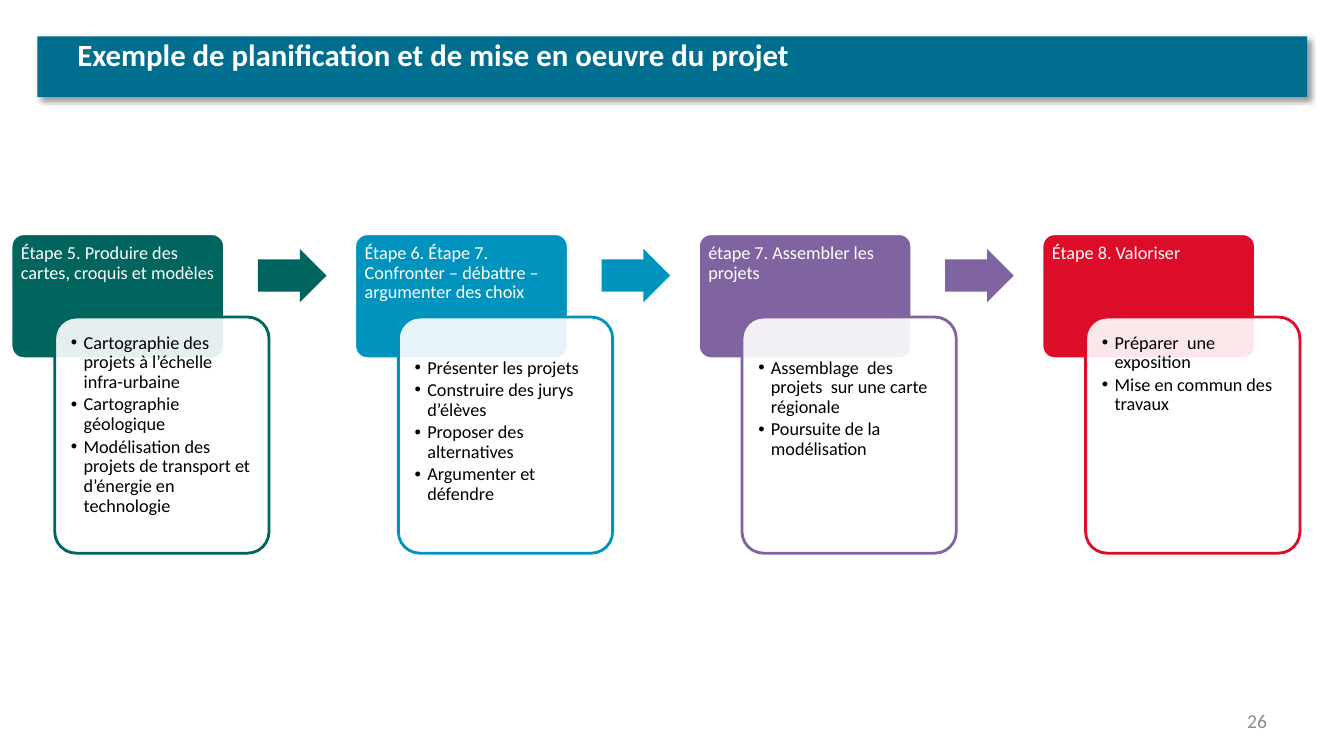
"""Build the slide showing steps 5 to 8 of the project plan."""
import pptx
import pptx.dml.color
import pptx.enum.shapes
import pptx.enum.text
import pptx.oxml
import pptx.oxml.ns
import pptx.util
from lxml import etree

Cm = pptx.util.Cm
Pt = pptx.util.Pt
qn = pptx.oxml.ns.qn
Shapes = pptx.enum.shapes.MSO_SHAPE
Anchor = pptx.enum.text.MSO_ANCHOR
Align = pptx.enum.text.PP_ALIGN

STEPS = [
    ("00645F", "Étape 5. Produire des cartes, croquis et modèles", 0, [
        "Cartographie des projets à l’échelle infra-urbaine",
        "Cartographie géologique",
        "Modélisation des projets de transport et d’énergie en technologie"]),
    ("0093BE", "Étape 6. Étape 7. Confronter – débattre – argumenter des choix", 0.63, [
        "Présenter les projets",
        "Construire des jurys d’élèves",
        "Proposer des alternatives",
        "Argumenter et défendre"]),
    ("8064A2", "étape 7. Assembler les projets", 0.63, [
        "Assemblage  des projets  sur une carte régionale",
        "Poursuite de la modélisation"]),
    ("DD0C29", "Étape 8. Valoriser", 0, [
        "Préparer  une exposition",
        "Mise en commun des travaux"]),
]
STEP_LEFT, STEP_TOP, STEP_PITCH = 0.28, 5.89, 8.66


def color(value):
    return pptx.dml.color.RGBColor.from_string(value)


class Painter:
    """Draws styled elements on the current slide."""

    font = "Calibri"

    def __init__(self, page):
        self.page = page

    def shape(self, kind, left, top, width, height, fill, line=None, adjustments=(), opacity=None):
        shape = self.page.shapes.add_shape(kind, Cm(left), Cm(top), Cm(width), Cm(height))
        shape.shadow.inherit = False
        for index, value in enumerate(adjustments):
            shape.adjustments[index] = value
        shape.fill.solid()
        shape.fill.fore_color.rgb = color(fill)
        if opacity is not None:
            fill_color = shape._element.spPr.find(qn("a:solidFill"))[0]
            etree.SubElement(fill_color, qn("a:alpha"), val=str(opacity * 1000))
        if line:
            shape.line.color.rgb = color(line)
            shape.line.width = Pt(2)
        else:
            shape.line.fill.background()
        return shape

    def drop_shadow(self, shape):
        effects = shape._element.spPr.find(qn("a:effectLst"))
        shadow = etree.SubElement(effects, qn("a:outerShdw"), blurRad=str(Pt(4)), dist=str(Pt(3)),
                                  dir="2700000", algn="tl", rotWithShape="0")
        shade = etree.SubElement(shadow, qn("a:srgbClr"), val="000000")
        etree.SubElement(shade, qn("a:alpha"), val="40000")

    def text(self, left, top, width, height, lines, size, ink, bold=False, bullets=False,
             align=Align.LEFT, anchor=Anchor.TOP, spacing=1.0, inset=0.25):
        box = self.page.shapes.add_textbox(Cm(left), Cm(top), Cm(width), Cm(height))
        frame = box.text_frame
        frame.word_wrap = True
        frame.vertical_anchor = anchor
        frame.margin_left = frame.margin_right = Cm(0.25)
        frame.margin_top = frame.margin_bottom = Cm(inset)
        for index, line in enumerate(lines):
            para = frame.add_paragraph() if index else frame.paragraphs[0]
            para.alignment = align
            para.line_spacing = spacing
            if bullets:
                para.space_after = Pt(2)
                self.bullet(para)
            span = para.add_run()
            span.text = line
            span.font.name = self.font
            span.font.size = Pt(size)
            span.font.bold = bold
            span.font.color.rgb = color(ink)

    def bullet(self, para):
        properties = para._p.get_or_add_pPr()
        properties.set("marL", str(Cm(0.32)))
        properties.set("indent", str(-Cm(0.32)))
        etree.SubElement(properties, qn("a:buFont"), typeface="Arial")
        etree.SubElement(properties, qn("a:buChar"), char="•")

    def step(self, left, top, tint, heading, drop, points):
        self.shape(Shapes.ROUNDED_RECTANGLE, left, top, 5.38, 3.15, tint, "FFFFFF", [0.1])
        self.text(left, top, 5.38, 2.1, [heading], 13, "FFFFFF", spacing=0.9)
        self.shape(Shapes.ROUNDED_RECTANGLE, left + 1.1, top + 2.1, 5.4, 5.95,
                   "FFFFFF", tint, [0.1], opacity=90)
        self.text(left + 1.26, top + 2.26 + drop, 5.08, 5.62 - drop, points, 13, "000000",
                  bullets=True, spacing=0.9)

    def arrow(self, left, top, tint):
        self.shape(Shapes.RIGHT_ARROW, left, top, 1.73, 1.35, tint, adjustments=[0.6, 0.5])


def main():
    deck = pptx.Presentation()
    deck.slide_width, deck.slide_height = Cm(33.87), Cm(19.05)
    painter = Painter(deck.slides.add_slide(deck.slide_layouts[6]))

    banner = painter.shape(Shapes.RECTANGLE, 0.94, 0.92, 32, 1.52, "006E8E")
    painter.drop_shadow(banner)
    painter.text(1.7, 0.77, 30.48, 1.6, ["Exemple de planification et de mise en oeuvre du projet"],
                 22, "FFFFFF", bold=True, inset=0.13)
    painter.text(30.53, 17.65, 1.65, 1.02, ["26"], 14, "8C8C8C",
                 align=Align.RIGHT, anchor=Anchor.MIDDLE, inset=0.13)

    for index, (tint, heading, drop, points) in enumerate(STEPS):
        left = STEP_LEFT + index * STEP_PITCH
        painter.step(left, STEP_TOP, tint, heading, drop, points)
        if index < len(STEPS) - 1:
            painter.arrow(left + 6.22, STEP_TOP + 0.38, tint)

    deck.save("out.pptx")


if __name__ == "__main__":
    main()
